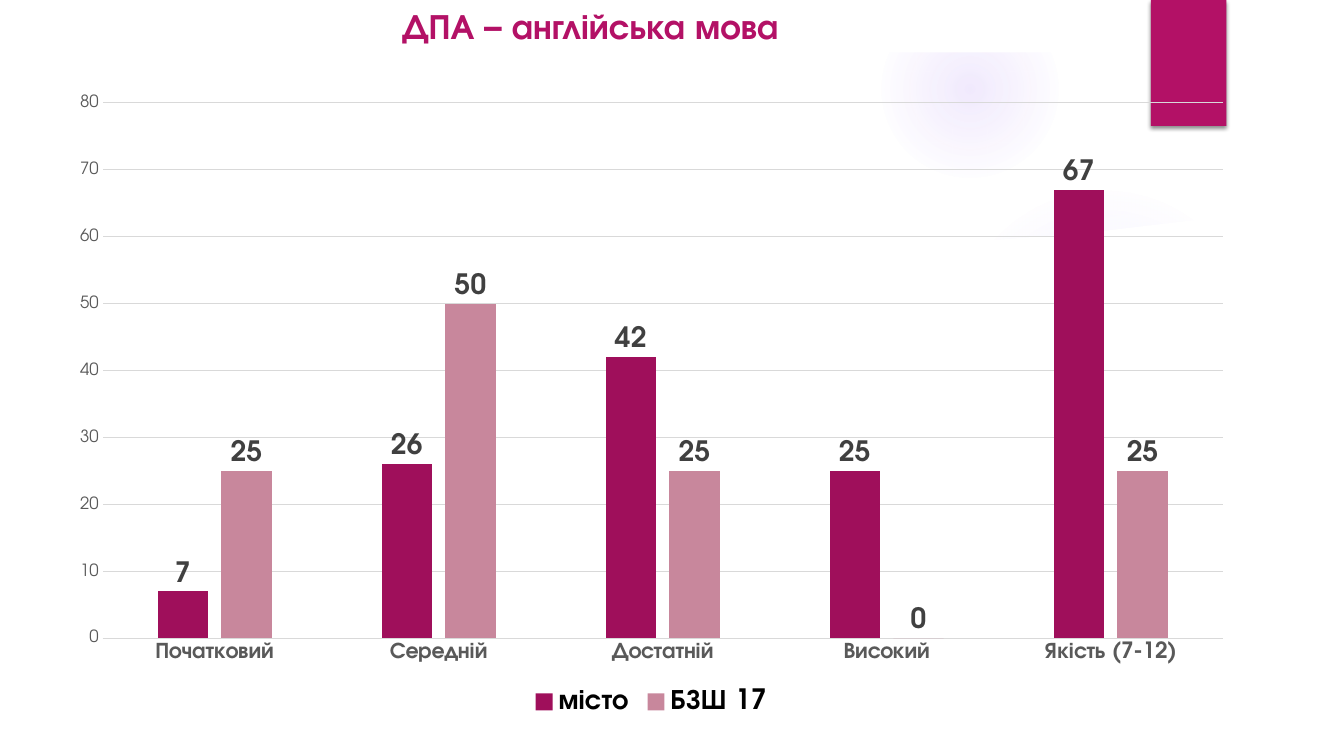
from dataclasses import dataclass

from lxml import etree
from pptx import Presentation
from pptx.chart.data import CategoryChartData
from pptx.dml.color import RGBColor
from pptx.enum.chart import XL_CHART_TYPE, XL_LABEL_POSITION, XL_LEGEND_POSITION, XL_TICK_MARK
from pptx.enum.shapes import MSO_SHAPE
from pptx.enum.text import MSO_ANCHOR, PP_ALIGN
from pptx.oxml import parse_xml
from pptx.oxml.ns import qn
from pptx.util import Emu, Inches, Pt

COLUMNS = XL_CHART_TYPE.COLUMN_CLUSTERED
LEGEND_BOTTOM = XL_LEGEND_POSITION.BOTTOM
OUTSIDE_END = XL_LABEL_POSITION.OUTSIDE_END
NO_TICK = XL_TICK_MARK.NONE
OVAL, RECTANGLE = MSO_SHAPE.OVAL, MSO_SHAPE.RECTANGLE
MIDDLE, LEFT = MSO_ANCHOR.MIDDLE, PP_ALIGN.LEFT

FONT = "TeX Gyre Adventor"
WHITE, MAGENTA, VIOLET = "FFFFFF", "B31166", "9B6BF2"
GRID_GREY, AXIS_GREY, LABEL_GREY = "D9D9D9", "595959", "404040"
NAMESPACE = 'xmlns:a="http://schemas.openxmlformats.org/drawingml/2006/main"'

# The slide is a grid of 160 columns and 90 rows of square cells.
SLIDE_COLS, SLIDE_ROWS = 160, 90
CELL = Inches(1) // 12

Point = tuple[float, float]


@dataclass(frozen=True)
class Glow:
    col: float
    row: float
    size: float
    stops: tuple[tuple[int, int], ...]  # position %, opacity %


@dataclass(frozen=True)
class School:
    name: str
    scores: tuple[int, ...]
    color: str


GLOWS = (
    Glow(113, 22, 37, ((0, 7), (36, 6), (69, 0))),
    Glow(105, 0.1, 21, ((0, 14), (36, 7), (73, 0))),
)
RIBBON: tuple[Point, ...] = (
    (112, 30), (133, 28.2), (154.7, 25.7), (154, 19.9), (145.5, 22.6),
    (134.5, 25.4), (123.7, 27.5), (111.6, 29.2),
)
WAVE_PANEL: tuple[Point, ...] = (
    (6, 84), (154, 84), (154, 24.5), (144, 26), (130.5, 27.6), (117, 28.7),
    (101, 29.5), (85, 29.8), (67, 29.5), (48, 28.6), (30, 27.2), (16, 25.8), (6, 24.5),
)
SLIDE_EDGE: tuple[Point, ...] = ((0, 0), (0, SLIDE_ROWS), (SLIDE_COLS, SLIDE_ROWS), (SLIDE_COLS, 0))
FRAME_OPENING: tuple[Point, ...] = ((153.75, 83.75), (6.25, 83.75), (6.25, 6.25), (153.75, 6.25))

LEVELS = ("Початковий", "Середній", "Достатній", "Високий", "Якість (7-12)")
SCHOOLS = (
    School("місто", (7, 26, 42, 25, 67), "9F0F5B"),
    School("БЗШ 17", (25, 50, 25, 0, 25), "C8879C"),
)


def rgb(color: str) -> RGBColor:
    return RGBColor.from_string(color)


def cells(*counts: float) -> list[Emu]:
    return [Emu(round(count * CELL)) for count in counts]


def style_font(font, size: float, color: str, bold: bool = False) -> None:
    font.name = FONT
    font.size = Pt(size)
    font.bold = bold
    font.color.rgb = rgb(color)


def paint(shape, color: str) -> None:
    shape.shadow.inherit = False
    shape.fill.solid()
    shape.fill.fore_color.rgb = rgb(color)
    shape.line.fill.background()


def draw_glow(slide, glow: Glow) -> None:
    """Add a circle that fades from its centre outwards."""
    circle = slide.shapes.add_shape(OVAL, *cells(glow.col, glow.row, glow.size, glow.size))
    paint(circle, VIOLET)
    stops = "".join(
        f'<a:gs pos="{position * 1000}"><a:srgbClr val="{VIOLET}">'
        f'<a:alpha val="{opacity * 1000}"/></a:srgbClr></a:gs>'
        for position, opacity in glow.stops
    )
    gradient = parse_xml(
        f'<a:gradFill {NAMESPACE} rotWithShape="1"><a:gsLst>{stops}</a:gsLst><a:path path="circle">'
        '<a:fillToRect l="50000" t="50000" r="50000" b="50000"/></a:path></a:gradFill>'
    )
    properties = circle.element.spPr
    properties.replace(properties.find(qn("a:solidFill")), gradient)


def draw_outline(slide, *contours: tuple[Point, ...], opacity: int = 100) -> None:
    """Add a white area; a second contour cuts a hole in the first."""
    builder = slide.shapes.build_freeform(*cells(*contours[0][0]), scale=1.0)
    for index, contour in enumerate(contours):
        if index:
            builder.move_to(*cells(*contour[0]))
        builder.add_line_segments([cells(*point) for point in contour[1:]], close=True)
    area = builder.convert_to_shape()
    paint(area, WHITE)
    if opacity < 100:
        tint = area.element.spPr.find(qn("a:solidFill"))[0]
        etree.SubElement(tint, qn("a:alpha"), val=str(opacity * 1000))


def draw_bookmark(slide) -> None:
    bookmark = slide.shapes.add_shape(RECTANGLE, *cells(137, 0, 9, 15))
    paint(bookmark, MAGENTA)
    bookmark.element.spPr.find(qn("a:effectLst")).append(parse_xml(
        f'<a:outerShdw {NAMESPACE} blurRad="{Pt(3)}" dist="{Pt(2)}" dir="5400000" rotWithShape="0">'
        '<a:srgbClr val="000000"><a:alpha val="45000"/></a:srgbClr></a:outerShdw>'
    ))


def draw_title(slide) -> None:
    frame = slide.shapes.add_textbox(*cells(46.7, 0, 65, 6)).text_frame
    frame.word_wrap = True
    frame.vertical_anchor = MIDDLE
    frame.text = "ДПА – англійська мова"
    title = frame.paragraphs[0]
    title.alignment = LEFT
    style_font(title.runs[0].font, 25.2, MAGENTA, bold=True)


def draw_results(slide) -> None:
    results = CategoryChartData(number_format="General")
    results.categories = LEVELS
    for school in SCHOOLS:
        results.add_series(school.name, school.scores)
    chart = slide.shapes.add_chart(COLUMNS, *cells(6.7, 9.8, 141.7, 76), results).chart
    style_font(chart.font, 10, "000000")
    chart.has_title = False
    chart.has_legend = True
    chart.legend.position = LEGEND_BOTTOM
    chart.legend.include_in_layout = False
    style_font(chart.legend.font, 20, "000000", bold=True)

    levels, scores = chart.category_axis, chart.value_axis
    for axis in (levels, scores):
        axis.major_tick_mark = axis.minor_tick_mark = NO_TICK
    style_font(levels.tick_labels.font, 16, AXIS_GREY, bold=True)
    style_font(scores.tick_labels.font, 12, AXIS_GREY)
    scores.minimum_scale, scores.maximum_scale, scores.major_unit = 0, 80, 10
    scores.format.line.fill.background()
    for line in (levels.format.line, scores.major_gridlines.format.line):
        line.color.rgb = rgb(GRID_GREY)
        line.width = Pt(0.75)

    plot = chart.plots[0]
    plot.gap_width, plot.overlap = 219, -27
    plot.vary_by_categories = False
    for school, bars in zip(SCHOOLS, plot.series):
        bars.invert_if_negative = False
        bars.format.fill.solid()
        bars.format.fill.fore_color.rgb = rgb(school.color)
        bars.data_labels.show_value = True
        bars.data_labels.position = OUTSIDE_END
        style_font(bars.data_labels.font, 20, LABEL_GREY, bold=True)


def main() -> None:
    deck = Presentation()
    deck.slide_width, deck.slide_height = cells(SLIDE_COLS, SLIDE_ROWS)
    slide = deck.slides.add_slide(deck.slide_layouts[6])
    for glow in GLOWS:
        draw_glow(slide, glow)
    draw_outline(slide, RIBBON, opacity=20)
    draw_outline(slide, WAVE_PANEL)
    draw_outline(slide, SLIDE_EDGE, FRAME_OPENING)
    draw_bookmark(slide)
    draw_title(slide)
    draw_results(slide)
    deck.save("out.pptx")


if __name__ == "__main__":
    main()
